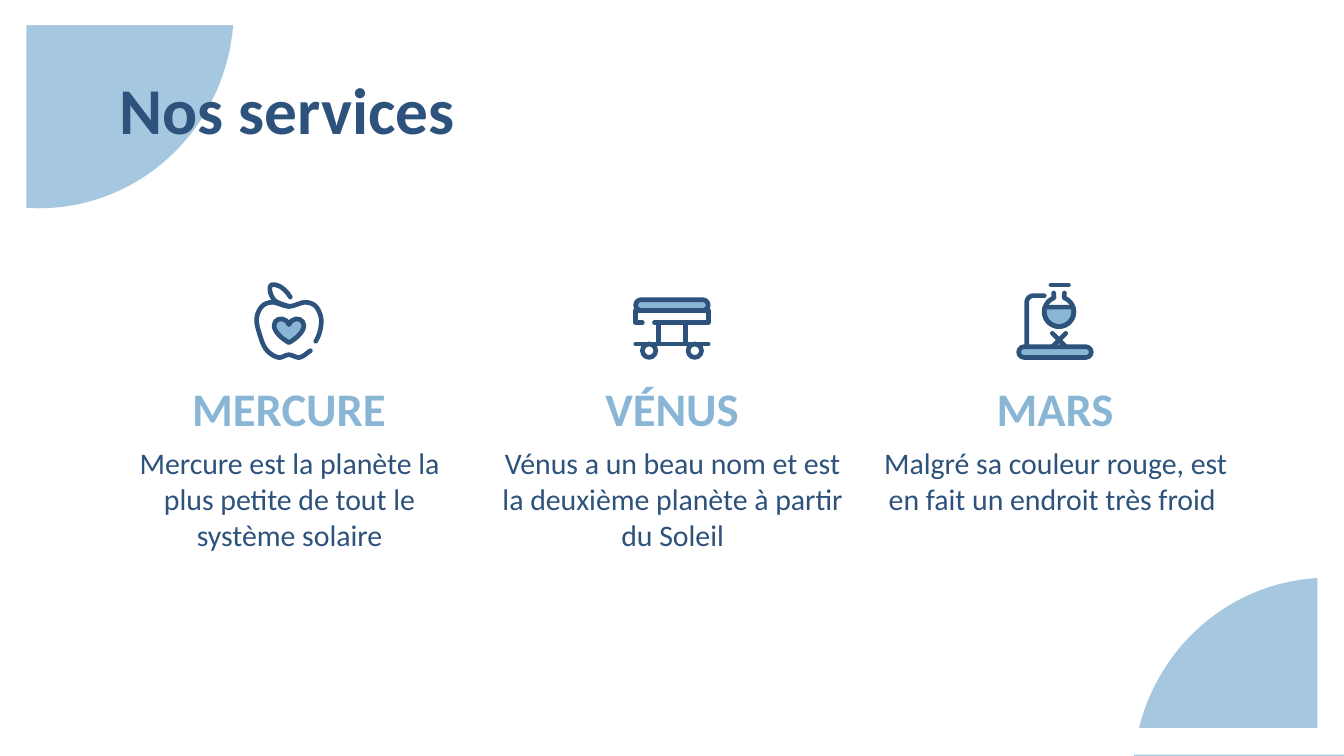
from dataclasses import dataclass
from math import cos, radians, sin

from lxml.etree import SubElement
from pptx import Presentation
from pptx.dml.color import RGBColor
from pptx.enum.shapes import MSO_CONNECTOR, MSO_SHAPE
from pptx.enum.text import MSO_ANCHOR, MSO_AUTO_SIZE, PP_ALIGN
from pptx.oxml.ns import qn
from pptx.util import Inches, Pt


@dataclass(frozen=True)
class Theme:
    """Colours, font and sizes of the deck."""
    navy: RGBColor = RGBColor(0x2D, 0x52, 0x7C)
    sky: RGBColor = RGBColor(0x8A, 0xB6, 0xD6)
    white: RGBColor = RGBColor(0xFF, 0xFF, 0xFF)
    font: str = "Calibri"
    title: Pt = Pt(35)
    heading: Pt = Pt(25)
    body: Pt = Pt(16)
    stroke: Pt = Pt(2.5)


THEME = Theme()
SLIDE_WIDTH = 10
SLIDE_HEIGHT = SLIDE_WIDTH * 9 / 16
SERVICES = [
    ("MERCURE", "Mercure est la planète la plus petite de tout le système solaire"),
    ("VÉNUS", "Vénus a un beau nom et est la deuxième planète à partir du Soleil"),
    ("MARS", "Malgré sa couleur rouge, est en fait un endroit très froid "),
]


def box(*lengths):
    """Convert lengths in inches."""
    return [Inches(length) for length in lengths]


def write_text(shape, text, size, color, bold=False, align=PP_ALIGN.CENTER, anchor=MSO_ANCHOR.TOP):
    """Fill a shape with one formatted paragraph."""
    frame = shape.text_frame
    frame.text = text
    frame.word_wrap = True
    frame.auto_size = MSO_AUTO_SIZE.NONE
    frame.vertical_anchor = anchor
    frame.margin_left = frame.margin_right = Inches(0.1)
    frame.margin_top = frame.margin_bottom = Inches(0.1)
    paragraph = frame.paragraphs[0]
    paragraph.alignment = align
    paragraph.font.name = THEME.font
    paragraph.font.size = size
    paragraph.font.bold = bold
    paragraph.font.color.rgb = color


def add_plain_shape(slide, kind, bounds, color, opacity=100):
    """Add a borderless filled preset shape."""
    shape = slide.shapes.add_shape(kind, *box(*bounds))
    shape.shadow.inherit = False
    shape.fill.solid()
    shape.fill.fore_color.rgb = color
    shape.line.fill.background()
    if opacity < 100:
        color_element = shape.element.spPr.find(qn("a:solidFill"))[0]
        SubElement(color_element, qn("a:alpha"), val=str(opacity * 1000))
    return shape


def style_stroke(shape):
    """Give a shape a navy line with round caps and joins."""
    shape.line.color.rgb = THEME.navy
    shape.line.width = THEME.stroke
    line = shape.element.spPr.get_or_add_ln()
    line.set("cap", "rnd")
    SubElement(line, qn("a:round"))


def style_icon_part(shape, fill=None):
    """Outline an icon part and fill it when a colour is given."""
    shape.shadow.inherit = False
    if fill is None:
        shape.fill.background()
    else:
        shape.fill.solid()
        shape.fill.fore_color.rgb = fill
    style_stroke(shape)


def add_part(group, kind, bounds, fill=None):
    """Add an outlined preset shape to an icon."""
    shape = group.shapes.add_shape(kind, *box(*bounds))
    if kind == MSO_SHAPE.ROUNDED_RECTANGLE:
        shape.adjustments[0] = 0.5
    style_icon_part(shape, fill)


def add_outline(group, points, fill=None, close=False):
    """Add an outlined path to an icon."""
    corners = [box(*point) for point in points]
    builder = group.shapes.build_freeform(*corners[0])
    builder.add_line_segments(corners[1:], close=close)
    style_icon_part(builder.convert_to_shape(), fill)


def add_line(group, *ends):
    """Add a straight stroke to an icon."""
    connector = group.shapes.add_connector(MSO_CONNECTOR.STRAIGHT, *box(*ends))
    style_stroke(connector)
    SubElement(connector.element.spPr, qn("a:effectLst"))


def arc(x, y, radius, start, end, steps=32):
    """Return points along a circular arc, in degrees."""
    angles = [radians(start + (end - start) * i / steps) for i in range(steps + 1)]
    return [(x + radius * cos(angle), y + radius * sin(angle)) for angle in angles]


def smooth(points, steps=8):
    """Return a Catmull-Rom curve through the points."""
    padded = [points[0], *points, points[-1]]
    curve = []
    for a, b, c, d in zip(padded, padded[1:], padded[2:], padded[3:]):
        for t in (i / steps for i in range(steps)):
            curve.append(tuple(
                q + 0.5 * t * (r - p + t * (2 * p - 5 * q + 4 * r - s + t * (3 * (q - r) + s - p)))
                for p, q, r, s in zip(a, b, c, d)))
    return curve + [points[-1]]


def add_apple(group):
    """Draw an apple with a leaf and a heart."""
    add_outline(group, smooth([
        (2.31, 2.61), (2.23, 2.66), (2.15, 2.64), (2.07, 2.66), (1.98, 2.6),
        (1.93, 2.48), (1.91, 2.37), (1.95, 2.28), (2.03, 2.25), (2.15, 2.28),
        (2.27, 2.25), (2.35, 2.28), (2.39, 2.37), (2.38, 2.47), (2.35, 2.54)]))
    add_outline(group, smooth([
        (2.15, 2.28), (2.05, 2.24), (2.01, 2.17), (2.02, 2.12),
        (2.08, 2.13), (2.13, 2.17), (2.16, 2.21)]))
    add_part(group, MSO_SHAPE.HEART, (2.04, 2.37, 0.22, 0.18), THEME.sky)


def add_stretcher(group):
    """Draw a wheeled stretcher."""
    add_outline(group, [(4.78, 2.4), (4.73, 2.4), (4.73, 2.31), (5.27, 2.31), (5.27, 2.4), (4.87, 2.4)])
    add_part(group, MSO_SHAPE.ROUNDED_RECTANGLE, (4.73, 2.23, 0.54, 0.08), THEME.sky)
    for x in (4.9, 5.1):
        add_line(group, x, 2.41, x, 2.55)
    add_line(group, 4.73, 2.56, 5.27, 2.56)
    for left in (4.78, 5.12):
        add_part(group, MSO_SHAPE.OVAL, (left, 2.56, 0.1, 0.1))


def add_flask(group):
    """Draw a flask on a heating stand."""
    add_line(group, 7.82, 2.12, 7.95, 2.12)
    add_outline(group, arc(7.88, 2.32, 0.11, -18, 198), THEME.sky, close=True)
    add_outline(group, [(7.92, 2.18), *arc(7.88, 2.32, 0.11, -70, 250), (7.84, 2.18)])
    add_line(group, 7.83, 2.58, 7.93, 2.48)
    add_line(group, 7.83, 2.48, 7.93, 2.58)
    add_outline(group, [(7.77, 2.2), *arc(7.69, 2.25, 0.05, 270, 180), (7.64, 2.59)])
    add_part(group, MSO_SHAPE.ROUNDED_RECTANGLE, (7.58, 2.58, 0.54, 0.08), THEME.sky)


def add_backdrop(slide):
    """Add the corner discs and the white frame."""
    for left, top in ((8.43, 4.3), (-1.16, -1.42)):
        add_plain_shape(slide, MSO_SHAPE.OVAL, (left, top, 2.9, 2.97), THEME.sky, 76)
    frame = add_plain_shape(slide, MSO_SHAPE.FRAME, (0, -0.01, SLIDE_WIDTH, SLIDE_HEIGHT), THEME.white)
    frame.adjustments[0] = 0.035


def add_title(slide, text):
    """Place the title in front of the backdrop."""
    title = slide.shapes.title
    title.left, title.top, title.width, title.height = box(0.79, 0.49, 8.43, 0.63)
    write_text(title, text, THEME.title, THEME.navy, True, PP_ALIGN.LEFT, MSO_ANCHOR.MIDDLE)
    slide.shapes.element.append(title.element)


def add_service(slide, column, heading, body):
    """Add the heading and description of one service."""
    offset = 2.85 * column
    heading_box = slide.shapes.add_textbox(*box(0.87 + offset, 2.73, 2.56, 0.58))
    write_text(heading_box, heading, THEME.heading, THEME.sky, bold=True)
    body_box = slide.shapes.add_textbox(*box(0.73 + offset, 3.21, 2.85, 1.1))
    write_text(body_box, body, THEME.body, THEME.navy)


def main():
    """Build and save the services slide."""
    presentation = Presentation()
    presentation.slide_width, presentation.slide_height = box(SLIDE_WIDTH, SLIDE_HEIGHT)
    slide = presentation.slides.add_slide(presentation.slide_layouts[5])
    add_backdrop(slide)
    add_title(slide, "Nos services")
    for column, (heading, body) in enumerate(SERVICES):
        add_service(slide, column, heading, body)
    for draw_icon in (add_apple, add_stretcher, add_flask):
        draw_icon(slide.shapes.add_group_shape())
    presentation.save("out.pptx")


if __name__ == "__main__":
    main()
